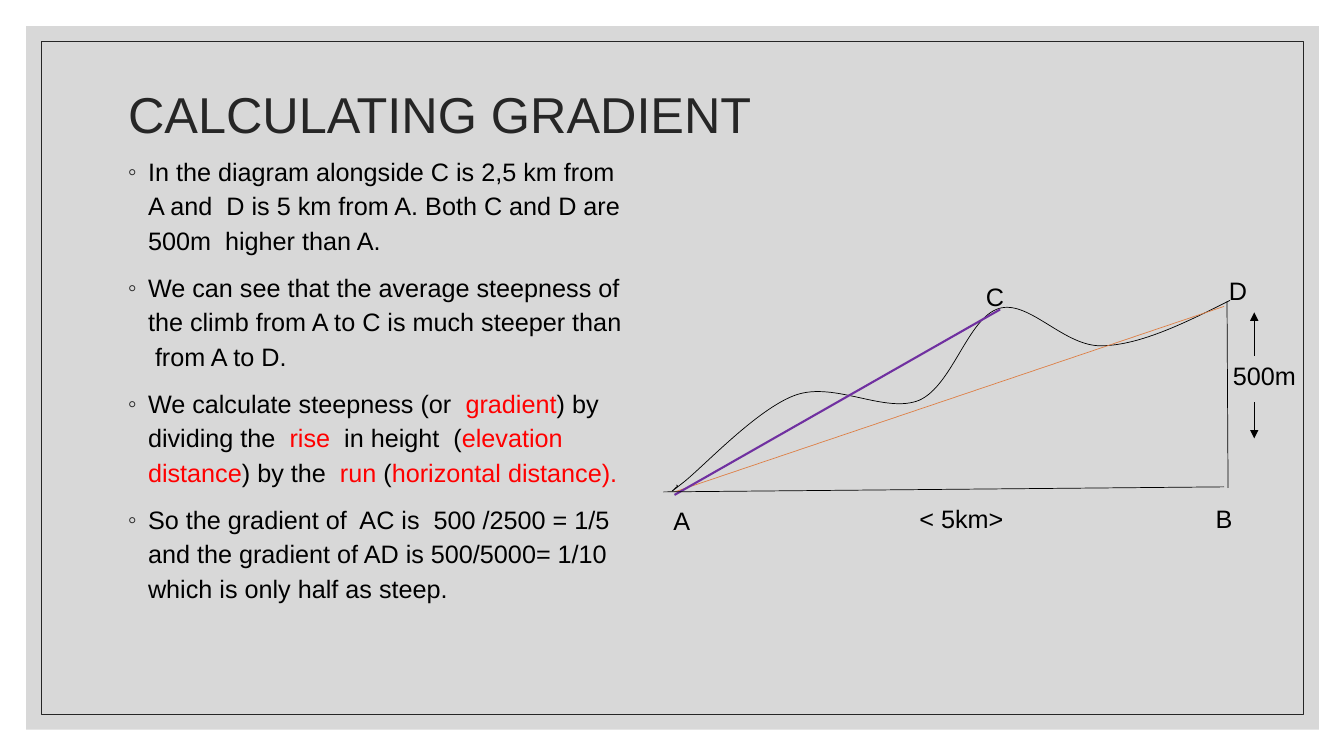
"""Builds the slide on calculating gradient."""
from lxml import etree
from pptx import Presentation
from pptx import util as u
from pptx.dml.color import RGBColor
from pptx.enum import shapes, text
from pptx.oxml import ns

BLACK, DARK = RGBColor(0, 0, 0), RGBColor(0x26, 0x26, 0x26)
GRAY, RED = RGBColor(0xBF, 0xBF, 0xBF), RGBColor(0xFF, 0, 0)
ORANGE, PURPLE = RGBColor(0xDD, 0x80, 0x47), RGBColor(0x70, 0x30, 0xA0)
FONT, SCALE = "Arial", 9144

SIZE = (1333, 750)
PANEL, FRAME = (26, 26, 1282, 698), (41, 41, 1252, 668)
TITLE, TITLE_BOX = "CALCULATING GRADIENT", (117, 70, 1100, 93)
BODY_BOX = (117, 146, 510, 494)
BODY = [
    [("In the diagram alongside C is 2,5 km from A and  D is 5 km from A. "
      "Both C and D are 500m  higher than A.", BLACK)],
    [("We can see that the average steepness of the climb from A to C is "
      "much steeper than  from A to D.", BLACK)],
    [("We calculate steepness (or  ", BLACK), ("gradient", RED),
     (") by dividing the  ", BLACK), ("rise  ", RED),
     ("in height  (", BLACK), ("elevation distance", RED),
     (") by the  ", BLACK), ("run ", RED), ("(", BLACK),
     ("horizontal distance).", RED)],
    [("So the gradient of  AC is  500 /2500 = 1/5 and the gradient of AD is "
      "500/5000= 1/10 which is only half as steep.", BLACK)],
]
HILL = [
    (1220, 298),
    (1176, 320), (1132, 342), (1094, 343),
    (1056, 345), (1021, 297), (991, 306),
    (960, 315), (945, 382), (912, 397),
    (878, 411), (828, 378), (789, 392),
    (750, 406), (696, 465), (676, 480),
    (657, 495), (673, 482), (672, 482),
    (671, 482), (671, 481), (671, 481),
]
LINES = [
    ((1218, 484), (1217, 299), BLACK, 0.5, False),
    ((669, 488), (1214, 304), ORANGE, 0.5, False),
    ((992, 307), (669, 491), PURPLE, 1.5, False),
    ((658, 488), (1214, 483), BLACK, 0.5, False),
    ((1244, 353), (1244, 310), BLACK, 0.5, True),
    ((1244, 399), (1244, 435), BLACK, 0.5, True),
]
LABELS = [
    ("A", (658, 496, 34, 40)),
    ("B", (1196, 494, 47, 40)),
    ("C", (968, 274, 54, 40)),
    ("D", (1209, 268, 52, 40)),
    ("< 5km>", (902, 494, 121, 40)),
    ("500m", (1213, 353, 96, 40)),
]


def px(nums):
    return [u.Emu(n * SCALE) for n in nums]


def put(item, vals):
    for key, val in vals.items():
        setattr(item, key, val)


def sub(node, tag, **vals):
    return etree.SubElement(node, ns.qn(tag), vals)


def write(para, words, size, color):
    run = para.add_run()
    run.text = words
    put(run.font, {"name": FONT, "size": u.Pt(size)})
    run.font.color.rgb = color


def stroke(line, color, width):
    line.color.rgb = color
    line.width = u.Pt(width)


def add_rect(slide, box):
    rect = slide.shapes.add_shape(shapes.MSO_SHAPE.RECTANGLE, *px(box))
    rect.shadow.inherit = False
    return rect


def add_back(slide):
    panel = add_rect(slide, PANEL)
    panel.fill.solid()
    panel.fill.fore_color.rgb = GRAY
    sub(panel.element.spPr.find(".//" + ns.qn("a:srgbClr")), "a:alpha", val="60000")
    panel.line.fill.background()
    frame = add_rect(slide, FRAME)
    frame.fill.background()
    stroke(frame.line, DARK, 0.5)


def add_title(slide):
    title = slide.shapes.title
    put(title, dict(zip(("left", "top", "width", "height"), px(TITLE_BOX))))
    put(title.text_frame, {"vertical_anchor": text.MSO_ANCHOR.MIDDLE,
                           "word_wrap": True})
    para = title.text_frame.paragraphs[0]
    put(para, {"alignment": text.PP_ALIGN.LEFT, "line_spacing": 0.9})
    write(para, TITLE, 36, DARK)
    title.element.getparent().append(title.element)


def add_text(slide, box, paras):
    frame = slide.shapes.add_textbox(*px(box)).text_frame
    frame.word_wrap = True
    for i, runs in enumerate(paras):
        para = frame.add_paragraph() if i else frame.paragraphs[0]
        for words, color in runs:
            write(para, words, 18, color)
    return frame


def add_body(slide):
    for para in add_text(slide, BODY_BOX, BODY).paragraphs:
        put(para, {"line_spacing": 1.14, "space_before": u.Pt(9)})
        props = para._p.get_or_add_pPr()
        props.set("marL", str(20 * SCALE))
        props.set("indent", str(-20 * SCALE))
        sub(sub(props, "a:buClr"), "a:srgbClr", val=str(DARK))
        sub(props, "a:buFont", typeface=FONT)
        sub(props, "a:buChar", char="◦")


def add_hill(slide):
    form = slide.shapes.build_freeform(*HILL[0], scale=SCALE)
    form.add_line_segments(HILL[1:], close=False)
    hill = form.convert_to_shape()
    hill.shadow.inherit = False
    hill.fill.background()
    stroke(hill.line, BLACK, 0.5)
    segs = hill.element.xpath(".//a:lnTo")
    for i in range(0, len(segs), 3):
        segs[i].tag = ns.qn("a:cubicBezTo")
        for seg in segs[i + 1:i + 3]:
            segs[i].append(seg[0])
            seg.getparent().remove(seg)


def add_line(slide, start, end, color, width, arrow):
    line = slide.shapes.add_connector(
        shapes.MSO_CONNECTOR.STRAIGHT, *px(start + end))
    stroke(line.line, color, width)
    if arrow:
        sub(line.line._get_or_add_ln(), "a:tailEnd", type="triangle")
    sub(line.element.spPr, "a:effectLst")


def main():
    deck = Presentation()
    deck.slide_width, deck.slide_height = px(SIZE)
    slide = deck.slides.add_slide(deck.slide_layouts[5])
    add_back(slide)
    add_title(slide)
    add_body(slide)
    add_hill(slide)
    for line in LINES:
        add_line(slide, *line)
    for words, box in LABELS:
        add_text(slide, box, [[(words, BLACK)]])
    deck.save("out.pptx")


if __name__ == "__main__":
    main()
